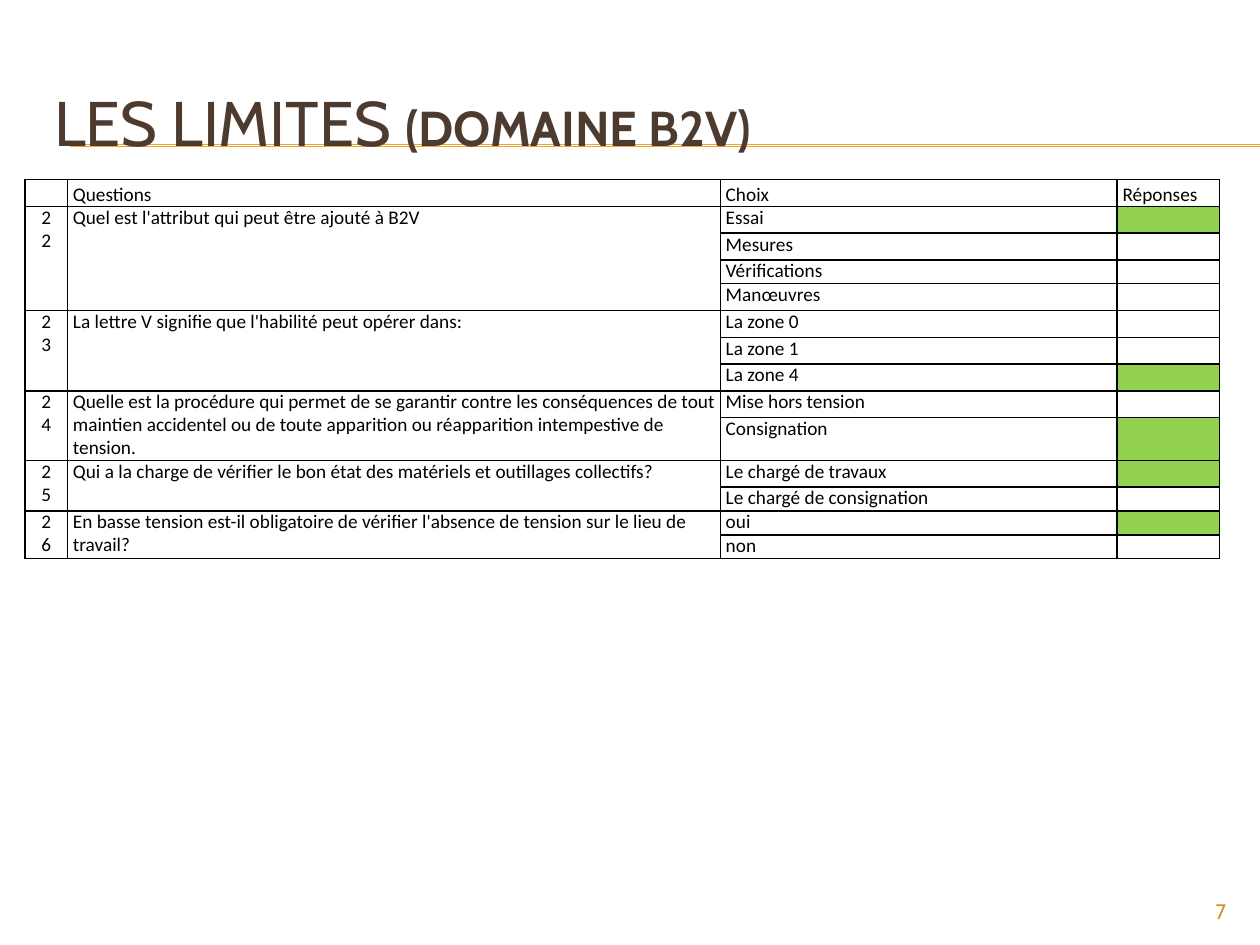
from lxml import etree
from pptx import Presentation
from pptx.dml.color import RGBColor
from pptx.enum.shapes import MSO_CONNECTOR
from pptx.enum.text import MSO_ANCHOR, PP_ALIGN
from pptx.oxml.ns import qn
from pptx.util import Cm, Pt

STRAIGHT = MSO_CONNECTOR.STRAIGHT
MIDDLE = MSO_ANCHOR.MIDDLE
CENTER, LEFT, RIGHT = PP_ALIGN.CENTER, PP_ALIGN.LEFT, PP_ALIGN.RIGHT

BLACK, WHITE, GREEN = "000000", "FFFFFF", "92D050"
BROWN, ORANGE, GOLD = "4E3B30", "F0A22E", "D48F29"

COLUMN_WIDTHS = [0.86, 13.16, 8, 2.06]
NORMAL_ROW, LOW_ROW, TALL_ROW = 0.54, 0.48, 0.86
SPECIAL_ROWS = {3: LOW_ROW, 9: TALL_ROW, 11: LOW_ROW, 12: LOW_ROW, 13: LOW_ROW}

HEADERS = ["", "Questions", "Choix", "Réponses"]
QUIZ = [
    ("22", "Quel est l'attribut qui peut être ajouté à B2V",
     ["Essai", "Mesures", "Vérifications", "Manœuvres"], "Essai"),
    ("23", "La lettre V signifie que l'habilité peut opérer dans:",
     ["La zone 0", "La zone 1", "La zone 4"], "La zone 4"),
    ("24", "Quelle est la procédure qui permet de se garantir contre les conséquences "
     "de tout maintien accidentel ou de toute apparition ou réapparition intempestive "
     "de tension.",
     ["Mise hors tension", "Consignation"], "Consignation"),
    ("25", "Qui a la charge de vérifier le bon état des matériels et outillages collectifs?",
     ["Le chargé de travaux", "Le chargé de consignation"], "Le chargé de travaux"),
    ("26", "En basse tension est-il obligatoire de vérifier l'absence de tension "
     "sur le lieu de travail?",
     ["oui", "non"], "oui"),
]


def rgb(value):
    return RGBColor.from_string(value)


def format_run(run, font_name, size, color, bold=False):
    run.font.name = font_name
    run.font.size = Pt(size)
    run.font.bold = bold
    run.font.color.rgb = rgb(color)


def add_rule(slide, left, top, right):
    rule = slide.shapes.add_connector(STRAIGHT, Cm(left), Cm(top), Cm(right), Cm(top))
    rule.line.color.rgb = rgb(ORANGE)
    rule.line.width = Pt(0.75)
    etree.SubElement(rule._element.spPr, qn("a:effectLst"))


def add_title(slide, left, top, width, height):
    for offset in (1.65, 1.68):
        add_rule(slide, left + 0.58, top + offset, 25.4)
    title = slide.shapes.add_textbox(Cm(left), Cm(top), Cm(width), Cm(height))
    frame = title.text_frame
    frame.word_wrap = True
    frame.vertical_anchor = MIDDLE
    paragraph = frame.paragraphs[0]
    for wording, size, bold in (("LES LIMITES ", 36, False), ("(DOMAINE B2V)", 28, True)):
        run = paragraph.add_run()
        run.text = wording
        format_run(run, "Cabin", size, BROWN, bold)


def add_page_number(slide, left, top, width, height):
    number = slide.shapes.add_textbox(Cm(left), Cm(top), Cm(width), Cm(height))
    number.text_frame.word_wrap = True
    paragraph = number.text_frame.paragraphs[0]
    paragraph.text = "7"
    paragraph.alignment = RIGHT
    format_run(paragraph.runs[0], "Cabin", 12, GOLD)


def set_borders(cell):
    properties = cell._tc.get_or_add_tcPr()
    for position, side in enumerate(("lnL", "lnR", "lnT", "lnB")):
        border = etree.Element(qn(f"a:{side}"), w=str(Pt(1)))
        fill = etree.SubElement(border, qn("a:solidFill"))
        etree.SubElement(fill, qn("a:srgbClr"), val=BLACK)
        properties.insert(position, border)


def style_cell(cell, fill=WHITE):
    cell.margin_left = cell.margin_right = cell.margin_top = cell.margin_bottom = 0
    cell.fill.solid()
    cell.fill.fore_color.rgb = rgb(fill)
    set_borders(cell)
    etree.SubElement(cell.text_frame.paragraphs[0]._p, qn("a:endParaRPr"), sz="1100")


def write_cell(cell, wording, indent=0.11, right_indent=0, alignment=LEFT, header=False):
    paragraph = cell.text_frame.paragraphs[0]
    paragraph.text = wording
    paragraph.alignment = alignment
    paragraph.line_spacing = 1.15 if header else Pt(13.2)
    if header:
        paragraph.space_before = Pt(1.4)
    properties = paragraph._p.get_or_add_pPr()
    properties.set("marL", str(Cm(indent)))
    properties.set("marR", str(Cm(right_indent)))
    properties.set("indent", "0")
    for run in paragraph.runs:
        format_run(run, "Calibri", 11, BLACK)


def add_quiz_table(slide, left, top):
    row_count = 1 + sum(len(choices) for _, _, choices, _ in QUIZ)
    heights = [SPECIAL_ROWS.get(row, NORMAL_ROW) for row in range(row_count)]
    table = slide.shapes.add_table(
        row_count, len(COLUMN_WIDTHS), Cm(left), Cm(top),
        Cm(sum(COLUMN_WIDTHS)), Cm(sum(heights))).table
    table.first_row = table.horz_banding = False
    for column, width in zip(table.columns, COLUMN_WIDTHS):
        column.width = Cm(width)
    for row, height in zip(table.rows, heights):
        row.height = Cm(height)

    answer_rows = set()
    for column, header in enumerate(HEADERS):
        if header:
            write_cell(table.cell(0, column), header, header=True)
    first = 1
    for number, question, choices, answer in QUIZ:
        last = first + len(choices) - 1
        for column in (0, 1):
            table.cell(first, column).merge(table.cell(last, column))
        write_cell(table.cell(first, 0), number, 0.4, 0.4, CENTER)
        write_cell(table.cell(first, 1), question)
        for row, choice in enumerate(choices, first):
            write_cell(table.cell(row, 2), choice)
        answer_rows.add(first + choices.index(answer))
        first = last + 1

    for row in range(row_count):
        for column in range(len(COLUMN_WIDTHS)):
            is_answer = column == 3 and row in answer_rows
            style_cell(table.cell(row, column), GREEN if is_answer else WHITE)


def main():
    presentation = Presentation()
    presentation.slide_width = Cm(25.4)
    presentation.slide_height = Cm(19.05)
    slide = presentation.slides.add_slide(presentation.slide_layouts[6])
    add_title(slide, 0.84, 1.27, 24.13, 2.34)
    add_page_number(slide, 22.86, 17.98, 2.11, 0.69)
    add_quiz_table(slide, 0.5, 3.62)
    presentation.save("out.pptx")


if __name__ == "__main__":
    main()
